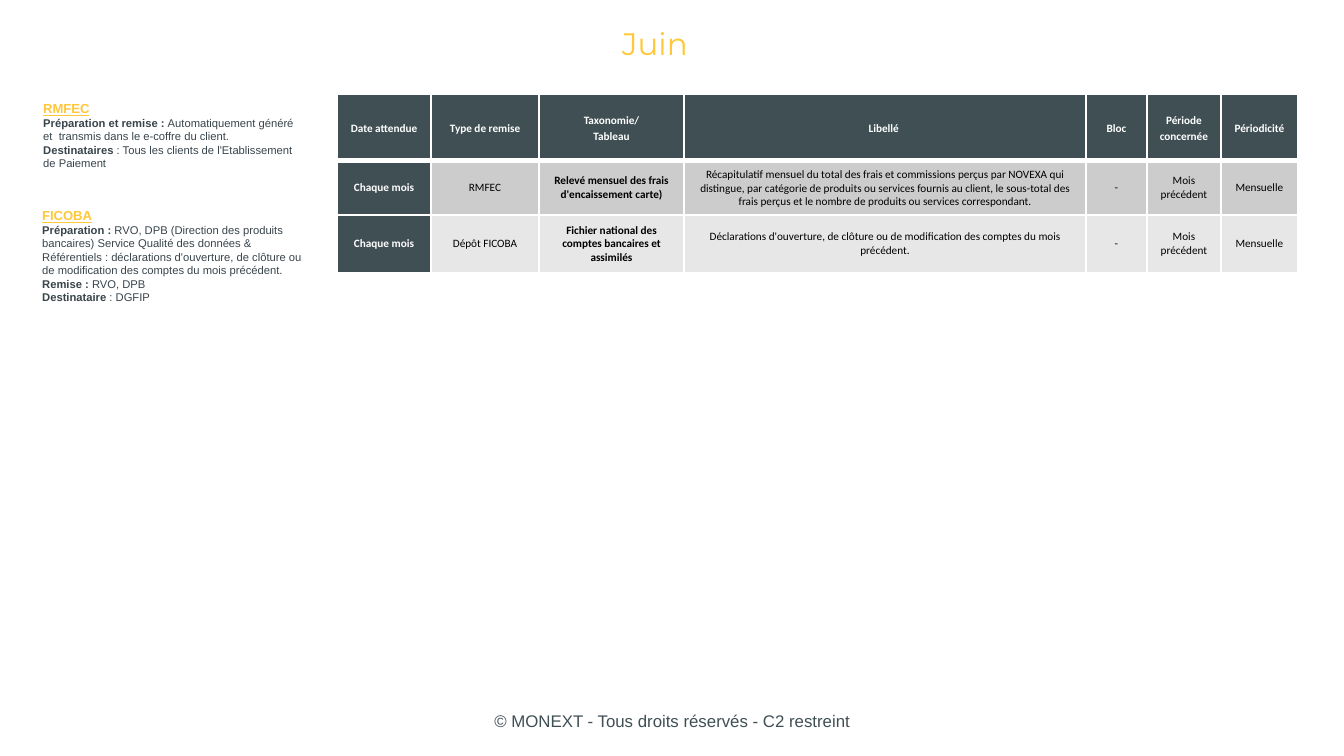
from dataclasses import dataclass

from lxml import etree
from pptx import Presentation
from pptx import util as u
from pptx.dml.color import RGBColor
from pptx.enum import text
from pptx.oxml.ns import qn

PX = 914400 / 134.4


def px(length):
    return u.Emu(round(length * PX))


@dataclass(frozen=True)
class Theme:
    white: str = "FFFFFF"
    black: str = "000000"
    slate: str = "404F54"
    ink: str = "38444B"
    yellow: str = "FFC83A"
    bands: tuple = ("CCCCCC", "E7E7E7")
    body_font: str = "Arial"
    table_font: str = "Calibri"
    title_font: str = "Montserrat"
    title_size: float = 16.6
    footer_size: float = 9
    heading_size: float = 7
    body_size: float = 6


class SlideBuilder:
    def __init__(self, slide, theme):
        self.slide = slide
        self.theme = theme

    def style(self, paragraph, name, size, color, bold=None, underline=None):
        font = paragraph.font
        font.name, font.size = name, u.Pt(size)
        font.color.rgb = RGBColor.from_string(color)
        font.bold, font.underline = bold, underline

    def text_frame(self, left, top, width, height):
        frame = self.slide.shapes.add_textbox(*map(px, (left, top, width, height))).text_frame
        frame.word_wrap = True
        return frame

    def centered_line(self, box, wording, name, size, color):
        frame = self.text_frame(*box)
        frame.vertical_anchor = text.MSO_ANCHOR.MIDDLE
        paragraph = frame.paragraphs[0]
        paragraph.text = wording
        paragraph.alignment = text.PP_ALIGN.CENTER
        self.style(paragraph, name, size, color)

    def note(self, box, heading, entries):
        theme = self.theme
        frame = self.text_frame(*box)
        title = frame.paragraphs[0]
        title.text = heading
        self.style(title, theme.body_font, theme.heading_size, theme.yellow, True, True)
        for label, detail in entries:
            paragraph = frame.add_paragraph()
            self.style(paragraph, theme.body_font, theme.body_size, theme.ink)
            for wording, bold in ((label, True), (detail, False)):
                run = paragraph.add_run()
                run.text = wording
                run.font.bold = bold

    def borders(self, cell, top, bottom):
        properties = cell._tc.get_or_add_tcPr()
        sides = (("a:lnL", 1), ("a:lnR", 1), ("a:lnT", top), ("a:lnB", bottom))
        for index, (side, points) in enumerate(sides):
            line = etree.Element(qn(side), w=str(u.Pt(points)))
            fill = etree.SubElement(line, qn("a:solidFill"))
            etree.SubElement(fill, qn("a:srgbClr"), val=self.theme.white)
            properties.insert(index, line)

    def cell(self, cell, wording, row, column):
        theme = self.theme
        header = row == 0
        dark = header or column == 0
        cell.fill.solid()
        fill = theme.slate if dark else theme.bands[(row - 1) % 2]
        cell.fill.fore_color.rgb = RGBColor.from_string(fill)
        cell.vertical_anchor = text.MSO_ANCHOR.MIDDLE
        if header:
            cell.margin_left = cell.margin_right = px(4)
            cell.margin_top = cell.margin_bottom = px(3)
        cell.text = wording
        for paragraph in cell.text_frame.paragraphs:
            paragraph.alignment = text.PP_ALIGN.CENTER
            if header:
                paragraph.line_spacing = 1.15
            color = theme.white if dark else theme.black
            self.style(paragraph, theme.table_font, theme.body_size, color, dark or column == 2)
        self.borders(cell, 3 if row == 1 else 1, 3 if header else 1)

    def table(self, left, top, widths, heights, rows):
        frame = self.slide.shapes.add_table(
            len(rows), len(widths), px(left), px(top), px(sum(widths)), px(sum(heights)))
        table = frame.table
        for column, width in zip(table.columns, widths):
            column.width = px(width)
        for row, height in zip(table.rows, heights):
            row.height = px(height)
        for row, wordings in enumerate(rows):
            for column, wording in enumerate(wordings):
                self.cell(table.cell(row, column), wording, row, column)


def main():
    presentation = Presentation()
    presentation.slide_width, presentation.slide_height = px(1344), px(756)
    theme = Theme()
    builder = SlideBuilder(presentation.slides.add_slide(presentation.slide_layouts[6]), theme)

    builder.centered_line((459, 700, 426, 41), "© MONEXT - Tous droits réservés - C2 restreint",
                          theme.body_font, theme.footer_size, theme.slate)

    period = ("-", "Mois précédent", "Mensuelle")
    builder.table(337, 94, (94, 108, 145, 402, 61, 74, 77), (67, 48, 58), (
        ("Date attendue", "Type de remise", "Taxonomie/\nTableau", "Libellé ",
         "Bloc", "Période concernée", "Périodicité"),
        ("Chaque mois", "RMFEC", "Relevé mensuel des frais d'encaissement carte)",
         "Récapitulatif mensuel du total des frais et commissions perçus par NOVEXA qui "
         "distingue, par catégorie de produits ou services fournis au client, le sous-total "
         "des frais perçus et le nombre de produits ou services correspondant.", *period),
        ("Chaque mois", "Dépôt FICOBA", "Fichier national des comptes bancaires et assimilés",
         "Déclarations d'ouverture, de clôture ou de modification des comptes du mois "
         "précédent.", *period),
    ))

    builder.centered_line((282, 19, 746, 48), "Juin",
                          theme.title_font, theme.title_size, theme.yellow)

    builder.note((29, 201, 288, 122), "FICOBA", (
        ("Préparation :", " RVO, DPB (Direction des produits bancaires) Service Qualité des "
         "données & Référentiels : déclarations d'ouverture, de clôture ou de modification "
         "des comptes du mois précédent."),
        ("Remise : ", "RVO, DPB"),
        ("Destinataire", " : DGFIP"),
    ))
    builder.note((30, 94, 288, 86), "RMFEC", (
        ("Préparation et remise : ",
         "Automatiquement généré et  transmis dans le e-coffre du client."),
        ("Destinataires", " : Tous les clients de l'Etablissement de Paiement"),
    ))

    presentation.save("out.pptx")


if __name__ == "__main__":
    main()
